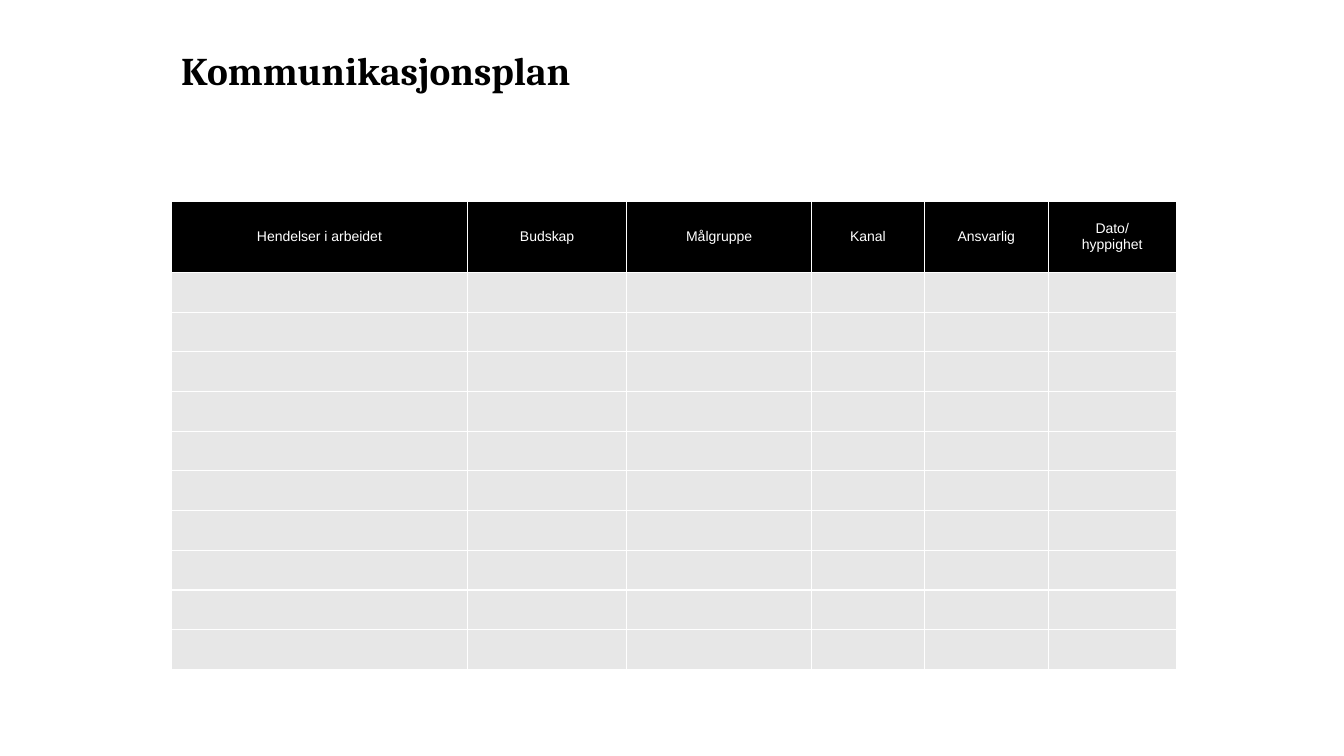
from dataclasses import dataclass

from lxml import etree
from pptx import Presentation
from pptx import util as u
from pptx.dml.color import RGBColor
from pptx.enum import text
from pptx.oxml import ns

BLACK = RGBColor(0x00, 0x00, 0x00)
WHITE = RGBColor(0xFF, 0xFF, 0xFF)
LIGHT_GREY = RGBColor(0xE7, 0xE7, 0xE7)

LEFT = u.Pt(122.4)
WIDTH = u.Pt(717.8)
TABLE_TOP = u.Pt(143.6)
HEADER_HEIGHT = u.Pt(51)
ROW_HEIGHT = u.Pt(28.35)
EMPTY_ROWS = 10
SIDE_INSET = u.Pt(0.72)
BORDER_WIDTH = u.Pt(1)


@dataclass
class Column:
    heading: tuple[str, ...]
    width: float


COLUMNS = [
    Column(("Hendelser i arbeidet",), 211.5),
    Column(("Budskap",), 113.8),
    Column(("Målgruppe",), 131.9),
    Column(("Kanal",), 80.7),
    Column(("Ansvarlig",), 88.5),
    Column(("Dato/", "hyppighet"), 91.4),
]


def add_run(paragraph, words: str, font: str, size: float, color: RGBColor,
            bold: bool = False) -> None:
    run = paragraph.add_run()
    run.text = words
    run.font.name = font
    run.font.size = u.Pt(size)
    run.font.bold = bold
    run.font.color.rgb = color


def add_title(slide, words: str) -> None:
    box = slide.shapes.add_textbox(LEFT, u.Pt(33.1), WIDTH, u.Pt(67.7))
    box.text_frame.word_wrap = True
    paragraph = box.text_frame.paragraphs[0]
    paragraph.line_spacing = 0.9
    paragraph.space_after = u.Pt(6)
    add_run(paragraph, words, "Cambria", 28, BLACK, bold=True)


def style_cell(cell, fill: RGBColor) -> None:
    cell.margin_left = cell.margin_right = SIDE_INSET
    cell.margin_top = cell.margin_bottom = 0
    cell.vertical_anchor = text.MSO_ANCHOR.MIDDLE
    # Borders come before the fill in the cell properties
    properties = cell._tc.get_or_add_tcPr()
    for side in ("lnL", "lnR", "lnT", "lnB"):
        line = etree.SubElement(properties, ns.qn(f"a:{side}"), w=str(BORDER_WIDTH))
        solid = etree.SubElement(line, ns.qn("a:solidFill"))
        etree.SubElement(solid, ns.qn("a:srgbClr"), val=str(WHITE))
    cell.fill.solid()
    cell.fill.fore_color.rgb = fill


def fill_heading(cell, lines: tuple[str, ...]) -> None:
    frame = cell.text_frame
    for index, words in enumerate(lines):
        paragraph = frame.add_paragraph() if index else frame.paragraphs[0]
        paragraph.alignment = text.PP_ALIGN.CENTER
        add_run(paragraph, words, "Arial", 10, WHITE)


def add_plan_table(slide) -> None:
    height = HEADER_HEIGHT + EMPTY_ROWS * ROW_HEIGHT
    frame = slide.shapes.add_table(EMPTY_ROWS + 1, len(COLUMNS),
                                   LEFT, TABLE_TOP, WIDTH, height)
    table = frame.table
    table.horz_banding = False
    for index, row in enumerate(table.rows):
        row.height = ROW_HEIGHT if index else HEADER_HEIGHT
        for cell in row.cells:
            style_cell(cell, LIGHT_GREY if index else BLACK)
    for index, column in enumerate(COLUMNS):
        table.columns[index].width = u.Pt(column.width)
        fill_heading(table.cell(0, index), column.heading)


def main() -> None:
    presentation = Presentation()
    presentation.slide_width = u.Pt(960)
    presentation.slide_height = u.Pt(540)
    slide = presentation.slides.add_slide(presentation.slide_layouts[6])
    add_title(slide, "Kommunikasjonsplan")
    add_plan_table(slide)
    presentation.save("out.pptx")


if __name__ == "__main__":
    main()
